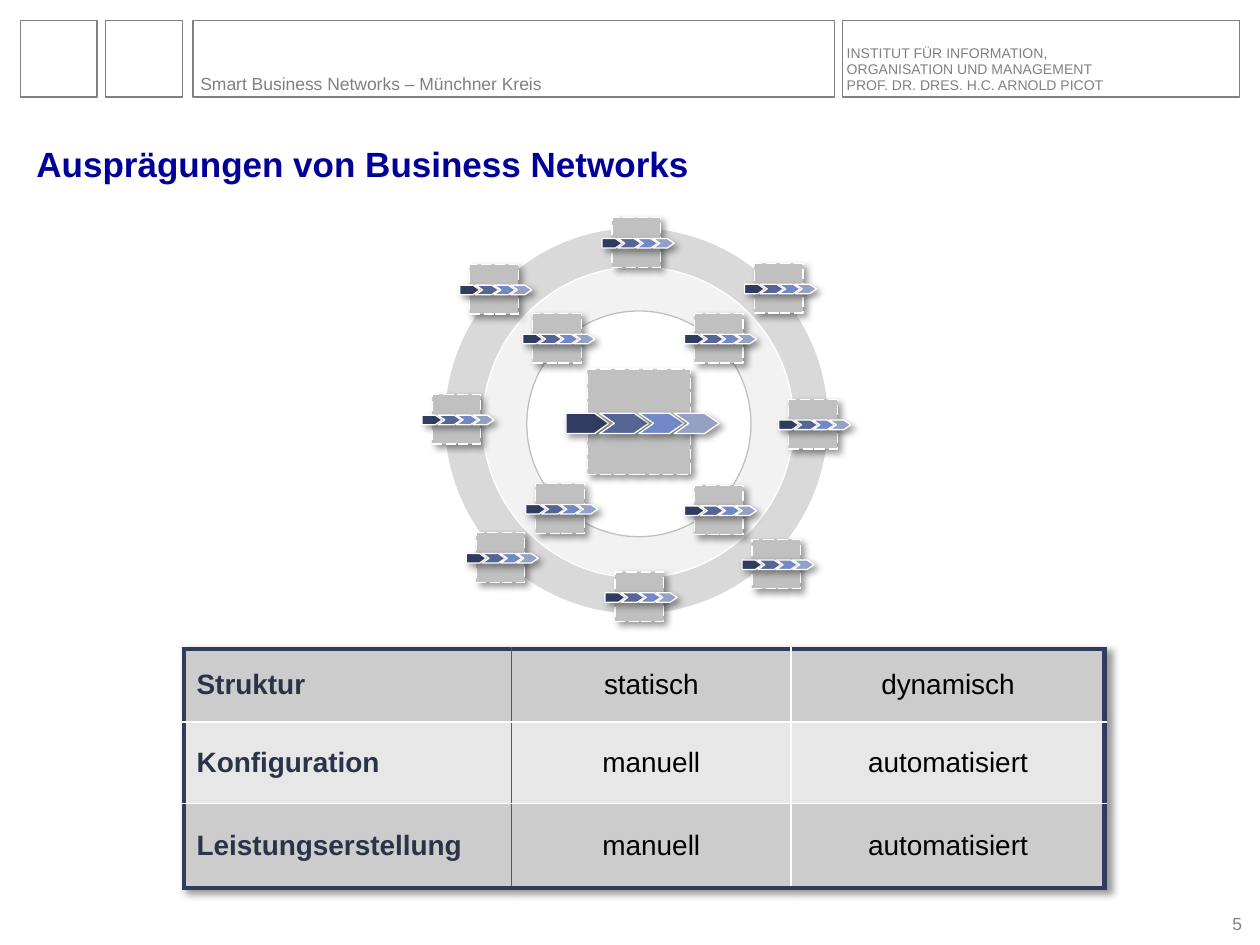
from lxml.etree import SubElement
from pptx import Presentation
from pptx.dml.color import RGBColor
from pptx.enum.dml import MSO_LINE
from pptx.enum.shapes import MSO_SHAPE
from pptx.enum.text import MSO_ANCHOR, MSO_AUTO_SIZE, PP_ALIGN
from pptx.oxml import parse_xml
from pptx.oxml.ns import nsdecls, qn
from pptx.util import Cm, Pt

COLORS = {
    "gray": "808080", "title": "000099", "black": "000000", "white": "FFFFFF",
    "outer": "D9D9D9", "middle": "F2F2F2", "node": "C0C0C0",
    "navy": "2F3B5F", "slate": "556594", "blue": "7288C7", "pale": "95A1C2",
    "label": "2B334A", "divider": "46598E", "dark_row": "CCCCCC", "light_row": "E7E7E7",
}
HEADER_BOXES = [(0.41, 1.55), (2.13, 1.55), (3.89, 12.93), (16.99, 8)]
RINGS = [
    ((8.97, 4.6, 7.72, 7.77), "outer", None),
    ((9.73, 5.38, 6.27, 6.27), "middle", "white"),
    ((10.62, 6.27, 4.52, 4.55), "white", "node"),
]
# Process steps of a full-size node: offset from its square, width, colour
STEPS = [(-0.43, 0.86, "navy"), (0.25, 0.99, "slate"), (1.04, 0.91, "blue"), (1.75, 0.91, "pale")]
CENTER_NODE = (11.84, 7.44)
PARTNER_SCALE = 0.47
PARTNER_NODES = [
    (8.71, 7.95), (9.47, 5.33), (9.6, 10.74), (12.4, 11.53), (15.16, 10.87), (15.9, 8.05),
    (15.21, 5.31), (12.34, 4.39), (14, 6.32), (10.8, 9.75), (14, 9.78), (10.74, 6.32),
]
TABLE_ROWS = [
    ("Struktur", "statisch", "dynamisch"),
    ("Konfiguration", "manuell", "automatisiert"),
    ("Leistungserstellung", "manuell", "automatisiert"),
]
COLUMN_WIDTHS = [6.6, 5.64, 6.32]
ROW_HEIGHTS = [1.47, 1.65, 1.7]


def rgb(name):
    return RGBColor.from_string(COLORS[name])


def add_shadow(effects):
    shadow = SubElement(effects, qn("a:outerShdw"), blurRad=str(Pt(4)), dist=str(Pt(3)),
                        dir="2700000", algn="tl", rotWithShape="0")
    color = SubElement(shadow, qn("a:srgbClr"), val=COLORS["black"])
    SubElement(color, qn("a:alpha"), val="40000")


class SlideBuilder:
    font = "Arial"
    line_width = Pt(0.75)

    def __init__(self, page):
        self.page = page

    def add_text(self, para, text, size, color, bold=False):
        for index, line in enumerate(text.split("\n")):
            if index:
                para.add_line_break()
            span = para.add_run()
            span.text = line
            span.font.name = self.font
            span.font.size = Pt(size)
            span.font.bold = bold
            span.font.color.rgb = rgb(color)

    def title(self, text, area):
        box = self.page.shapes.title
        box.left, box.top, box.width, box.height = map(Cm, area)
        frame = box.text_frame
        frame.vertical_anchor = MSO_ANCHOR.TOP
        frame.auto_size = MSO_AUTO_SIZE.NONE
        para = frame.paragraphs[0]
        para.alignment = PP_ALIGN.LEFT
        self.add_text(para, text, 20, "title", bold=True)

    def text(self, paragraphs, area, size, align=PP_ALIGN.LEFT, spacing=0.95):
        frame = self.page.shapes.add_textbox(*map(Cm, area)).text_frame
        frame.word_wrap = True
        frame.vertical_anchor = MSO_ANCHOR.BOTTOM
        frame.margin_left = frame.margin_right = frame.margin_top = frame.margin_bottom = 0
        for index, text in enumerate(paragraphs):
            para = frame.add_paragraph() if index else frame.paragraphs[0]
            para.alignment = align
            para.line_spacing = spacing
            self.add_text(para, text, size, "gray")

    def shape(self, kind, area, fill=None, line=None, shadow=False, parent=None):
        shape = (parent or self.page).shapes.add_shape(kind, *map(Cm, area))
        shape.shadow.inherit = False
        if fill:
            shape.fill.solid()
            shape.fill.fore_color.rgb = rgb(fill)
        else:
            shape.fill.background()
        if line:
            shape.line.color.rgb = rgb(line)
            shape.line.width = self.line_width
        else:
            shape.line.fill.background()
        if shadow:
            add_shadow(shape._element.spPr.find(qn("a:effectLst")))
        return shape

    def node(self, left, top, scale=1.0):
        """Draw a dashed square crossed by a four-step process chain."""
        group = self.page.shapes.add_group_shape()
        style = {"line": "white", "shadow": True, "parent": group}
        square = self.shape(MSO_SHAPE.RECTANGLE, (left, top, 2.08 * scale, 2.13 * scale),
                            "node", **style)
        square.line.dash_style = MSO_LINE.LONG_DASH
        for index, (offset, width, color) in enumerate(STEPS):
            kind, point = (MSO_SHAPE.CHEVRON, 0.72) if index else (MSO_SHAPE.PENTAGON, 0.69)
            area = (left + offset * scale, top + 0.89 * scale, width * scale, 0.41 * scale)
            self.shape(kind, area, color, **style).adjustments[0] = point

    def cell_borders(self, cell, borders):
        properties = cell._tc.get_or_add_tcPr()
        for index, (side, (color, width)) in enumerate(borders.items()):
            properties.insert(index, parse_xml(
                f'<a:ln{side} {nsdecls("a")} w="{Pt(width)}"><a:solidFill>'
                f'<a:srgbClr val="{COLORS[color]}"/></a:solidFill></a:ln{side}>'))

    def table(self, rows, left, top):
        frame = self.page.shapes.add_table(
            len(rows), len(COLUMN_WIDTHS), Cm(left), Cm(top),
            Cm(sum(COLUMN_WIDTHS)), Cm(sum(ROW_HEIGHTS)))
        table = frame.table
        table.first_row = table.horz_banding = False
        effects = parse_xml(f'<a:effectLst {nsdecls("a")}/>')
        add_shadow(effects)
        table._tbl.tblPr.insert(0, effects)
        for column, width in zip(table.columns, COLUMN_WIDTHS):
            column.width = Cm(width)
        frame_line, row_line = ("navy", 3), ("white", 1)
        column_lines = [frame_line, ("divider", 1), ("white", 1), frame_line]
        row_lines = [frame_line, row_line, row_line, frame_line]
        for r, texts in enumerate(rows):
            table.rows[r].height = Cm(ROW_HEIGHTS[r])
            for c, text in enumerate(texts):
                cell = table.cell(r, c)
                cell.vertical_anchor = MSO_ANCHOR.MIDDLE
                cell.fill.solid()
                cell.fill.fore_color.rgb = rgb("light_row" if r % 2 else "dark_row")
                self.cell_borders(cell, {"L": column_lines[c], "R": column_lines[c + 1],
                                         "T": row_lines[r], "B": row_lines[r + 1]})
                para = cell.text_frame.paragraphs[0]
                para.alignment = PP_ALIGN.CENTER if c else PP_ALIGN.LEFT
                self.add_text(para, text, 16, "black" if c else "label", bold=c == 0)


def main():
    deck = Presentation()
    deck.slide_width, deck.slide_height = Cm(25.4), Cm(19.05)
    builder = SlideBuilder(deck.slides.add_slide(deck.slide_layouts[5]))

    for left, width in HEADER_BOXES:
        builder.shape(MSO_SHAPE.RECTANGLE, (left, 0.41, width, 1.55), line="gray")
    builder.text(["Smart Business Networks – Münchner Kreis"], (4.04, 0.86, 13.64, 1.04), 10)
    builder.text(["INSTITUT FÜR INFORMATION,\nORGANISATION UND MANAGEMENT",
                  "PROF. DR. DRES. H.C. ARNOLD PICOT"], (17.07, 0.71, 6.6, 1.17), 8)
    builder.title("Ausprägungen von Business Networks", (0.48, 2.74, 22.81, 1.12))
    builder.text(["5"], (24.33, 18.39, 0.71, 0.43), 10, PP_ALIGN.RIGHT, spacing=1.0)

    for area, fill, line in RINGS:
        builder.shape(MSO_SHAPE.OVAL, area, fill, line)
    builder.node(*CENTER_NODE)
    for left, top in PARTNER_NODES:
        builder.node(left, top, PARTNER_SCALE)

    builder.table(TABLE_ROWS, 3.71, 13.08)
    deck.save("out.pptx")


if __name__ == "__main__":
    main()
